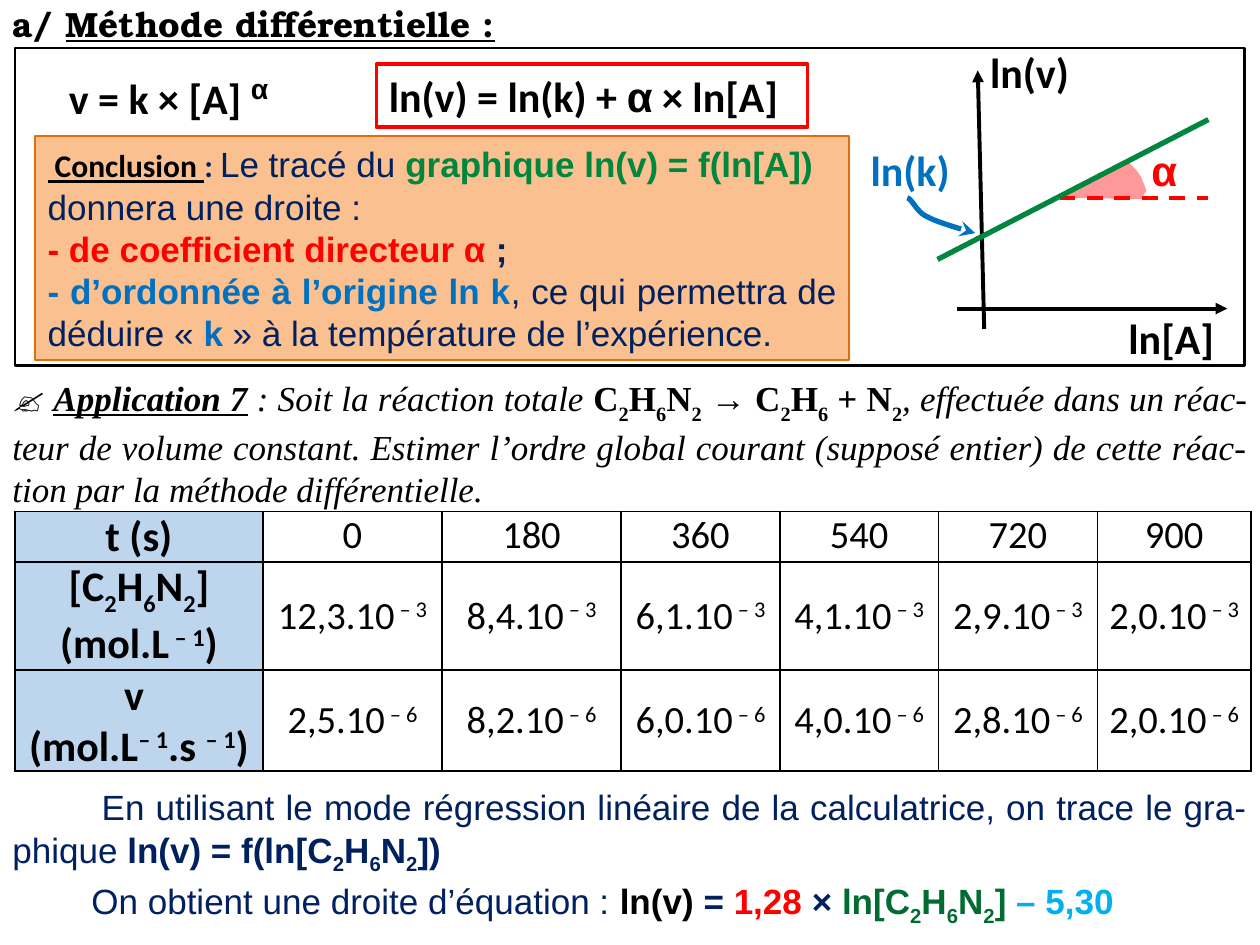
"""Build the slide on the differential method for reaction orders."""
from lxml import etree
from pptx import Presentation
from pptx.dml.color import RGBColor
from pptx.enum.dml import MSO_LINE
from pptx.enum.shapes import MSO_CONNECTOR, MSO_SHAPE
from pptx.enum.text import MSO_ANCHOR, PP_ALIGN
from pptx.oxml.ns import qn
from pptx.util import Cm, Pt

LEFT, CENTER, JUSTIFY = PP_ALIGN.LEFT, PP_ALIGN.CENTER, PP_ALIGN.JUSTIFY
TOP, MIDDLE = MSO_ANCHOR.TOP, MSO_ANCHOR.MIDDLE
STRAIGHT, RECTANGLE, DASH = MSO_CONNECTOR.STRAIGHT, MSO_SHAPE.RECTANGLE, MSO_LINE.DASH

THEME = {
    "black": "000000", "white": "FFFFFF", "navy": "002060", "red": "FF0000",
    "green": "00863D", "dark green": "006C31", "blue": "0070C0", "sky": "00B0F0",
    "peach": "FAC090", "orange": "E46C0A", "pale blue": "BDD6EE",
    "heading": ("TeX Gyre Bonum", 20), "formula": ("Calibri", 24),
    "greek": ("Arial", 24), "exponent": ("Arial", 28), "label": ("Calibri", 18),
    "body": ("Arial", 20), "exercise": ("Times New Roman", 20), "value": ("Calibri", 22),
}
BASELINES = {"~": "-25000", "|": "-30000", "^": "30000"}

TITLE = [("a/ ", "black", "b", "heading"), ("Méthode différentielle :", "black", "bu", "heading")]
RATE_LAW = [("v = k × [A] ", "black", "b", "formula"), ("^α^", "black", "b", "exponent")]
LOG_LAW = [
    ("ln(v) = ln(k) + ", "black", "b", "formula"),
    ("α", "black", "b", "greek"),
    (" × ln[A]", "black", "b", "formula"),
]
CONCLUSION = [
    [
        (" Conclusion ", "black", "bu", "label"),
        (": ", "navy", "b", "label"),
        ("Le tracé du ", "navy", "", "body"),
        ("graphique ln(v) = f(ln[A]) ", "green", "b", "body"),
        ("donnera une droite :", "navy", "", "body"),
    ],
    [("- de coefficient directeur α ", "red", "b", "body"), ("; ", "navy", "b", "body")],
    [
        ("- d’ordonnée à l’origine ln k", "blue", "b", "body"),
        (", ce qui permettra de déduire « ", "navy", "", "body"),
        ("k", "blue", "b", "body"),
        (" » à la température de l’expérience. ", "navy", "", "body"),
    ],
]
EXERCISE = [
    ("✍ ", "black", "b", "exercise"),
    ("Application 7", "black", "biu", "exercise"),
    (" : Soit la réaction totale ", "black", "i", "exercise"),
    ("C|2|H|6|N|2| → C|2|H|6| + N|2|", "black", "b", "exercise"),
    (", effectuée dans un réac-teur de volume constant. Estimer l’ordre global courant "
     "(supposé entier) de cette réac-tion par la méthode différentielle.", "black", "i", "exercise"),
]
REGRESSION = [
    ("En utilisant le mode régression linéaire de la calculatrice, on trace le gra-phique ",
     "navy", "", "body"),
    ("ln(v) = f(ln[C~2~H~6~N~2~])", "navy", "b", "body"),
]
RESULT = [
    (" On obtient une droite d’équation : ", "navy", "", "body"),
    ("ln(v) ", "black", "b", "body"),
    ("=", "navy", "b", "body"),
    (" 1,28 ", "red", "b", "body"),
    ("× ", "navy", "b", "body"),
    ("ln[C~2~H~6~N~2~] ", "dark green", "b", "body"),
    ("– 5,30", "sky", "b", "body"),
]
MEASURES = [
    (["t (s)"], ["0", "180", "360", "540", "720", "900"], ""),
    (["[C~2~H~6~N~2~] (mol.L^ – 1^)"], ["12,3", "8,4", "6,1", "4,1", "2,9", "2,0"], ".10^ – 3^"),
    (["v ", "(mol.L^– 1^.s ^– 1^)"], ["2,5", "8,2", "6,0", "4,0", "2,8", "2,0"], ".10^ – 6^"),
]
COLUMN_WIDTHS = [5, 3.61, 3.61, 3.2, 3.2, 3.2, 3.1]
ROW_HEIGHTS = [1.02, 2.18, 2.03]

GRAPH_LABELS = [
    ((22.5, 6.17, 2.36, 0.81), ("ln[A]", "black", "b", "formula")),
    ((19.71, 0.81, 2.21, 0.84), ("ln(v)", "black", "b", "formula")),
    ((22.96, 2.79, 1.04, 1.27), ("α", "red", "b", "greek")),
    ((17.3, 2.79, 2.13, 1.27), ("ln(k)", "blue", "b", "formula")),
]
X_AXIS, Y_AXIS = (19.3, 6.22, 24.74, 6.22), (19.84, 6.63, 19.71, 1.42)
LEVEL, TREND = (21.36, 3.99, 24.36, 3.99), (24.36, 2.41, 18.9, 5.23)
WEDGE = [(22.71, 3.23), (21.34, 3.99), (23.01, 4.01), (23.11, 3.84), (23.01, 3.58), (22.91, 3.43)]
POINTER = [
    [(18.29, 3.99), (18.39, 4.01), (18.47, 4.27), (18.69, 4.37)],
    [(18.69, 4.37), (18.92, 4.5), (19.66, 4.7), (19.66, 4.7)],
]


def color(name):
    return RGBColor.from_string(THEME[name])


def write_spans(para, spans, align=LEFT):
    para.alignment = align
    for text, ink, flags, style in spans:
        face, size = THEME[style]
        pieces, baseline = [["", None]], None
        for letter in text:
            if letter in BASELINES:
                baseline = None if baseline else BASELINES[letter]
                pieces.append(["", baseline])
            else:
                pieces[-1][0] += letter
        for piece, shift in pieces:
            if not piece:
                continue
            span = para.add_run()
            span.text = piece
            font = span.font
            font.name, font.size, font.color.rgb = face, Pt(size), color(ink)
            font.bold, font.italic, font.underline = "b" in flags, "i" in flags, "u" in flags
            if shift:
                font._element.set("baseline", shift)


def write_paragraphs(frame, paragraphs, aligns, anchor=TOP, wrap=True):
    frame.word_wrap, frame.vertical_anchor = wrap, anchor
    for index, (spans, align) in enumerate(zip(paragraphs, aligns)):
        write_spans(frame.add_paragraph() if index else frame.paragraphs[0], spans, align)


def add_text(page, place, spans, align=LEFT, anchor=TOP, wrap=True):
    box = page.shapes.add_textbox(*map(Cm, place))
    write_paragraphs(box.text_frame, [spans], [align], anchor, wrap)
    return box


def add_box(page, place, ink, width, fill=None):
    box = page.shapes.add_shape(RECTANGLE, *map(Cm, place))
    box.shadow.inherit = False
    if fill:
        box.fill.solid()
        box.fill.fore_color.rgb = color(fill)
    else:
        box.fill.background()
    box.line.color.rgb, box.line.width = color(ink), Pt(width)
    return box


def add_arrowhead(line, kind):
    etree.SubElement(line._get_or_add_ln(), qn("a:tailEnd"), type=kind)


def add_line(page, ends, ink, width):
    line = page.shapes.add_connector(STRAIGHT, *map(Cm, ends))
    line.line.color.rgb, line.line.width = color(ink), Pt(width)
    etree.SubElement(line._element.spPr, qn("a:effectLst"))
    return line.line


def add_outline(page, points, close):
    start, *others = [(Cm(x), Cm(y)) for x, y in points]
    builder = page.shapes.build_freeform(*start)
    builder.add_line_segments(others, close=close)
    outline = builder.convert_to_shape()
    outline.shadow.inherit = False
    return outline


def bezier(controls, steps=12):
    weights = [((1 - t) ** 3, 3 * t * (1 - t) ** 2, 3 * t * t * (1 - t), t ** 3)
               for t in (step / steps for step in range(steps + 1))]
    return [tuple(sum(w * point[axis] for w, point in zip(row, controls)) for axis in (0, 1))
            for row in weights]


def draw_graph(page):
    for axis in (X_AXIS, Y_AXIS):
        add_arrowhead(add_line(page, axis, "black", 2.25), "triangle")
    add_line(page, LEVEL, "red", 2.25).dash_style = DASH
    wedge = add_outline(page, WEDGE, True)
    wedge.fill.solid()
    wedge.fill.fore_color.rgb = color("red")
    wedge.line.fill.background()
    tint = wedge._element.spPr.find(qn("a:solidFill"))[0]
    etree.SubElement(tint, qn("a:alpha"), val="40000")
    add_line(page, TREND, "green", 3)
    for place, span in GRAPH_LABELS:
        add_text(page, place, [span], wrap=False)
    first, second = map(bezier, POINTER)
    pointer = add_outline(page, first + second[1:], False)
    pointer.fill.background()
    pointer.line.color.rgb, pointer.line.width = color("blue"), Pt(3)
    add_arrowhead(pointer.line, "stealth")


def fill_cell(cell, lines, style, flags, fill, anchor):
    cell.margin_left = cell.margin_right = Cm(0.18)
    cell.margin_top = cell.margin_bottom = 0
    cell.fill.solid()
    cell.fill.fore_color.rgb = color(fill)
    paragraphs = [[(line, "black", flags, style)] for line in lines]
    write_paragraphs(cell.text_frame, paragraphs, [CENTER] * len(lines))
    cell.vertical_anchor = anchor
    for index, side in enumerate(("lnL", "lnR", "lnT", "lnB")):
        border = etree.Element(qn("a:" + side), w=str(Pt(1)))
        paint = etree.SubElement(border, qn("a:solidFill"))
        etree.SubElement(paint, qn("a:srgbClr"), val=THEME["black"])
        cell._tc.get_or_add_tcPr().insert(index, border)


def add_measures(page):
    place = (0.3, 10.31, sum(COLUMN_WIDTHS), sum(ROW_HEIGHTS))
    table = page.shapes.add_table(len(ROW_HEIGHTS), len(COLUMN_WIDTHS), *map(Cm, place)).table
    table.first_row = table.horz_banding = False
    for column, width in zip(table.columns, COLUMN_WIDTHS):
        column.width = Cm(width)
    for row, height, (header, values, power) in zip(table.rows, ROW_HEIGHTS, MEASURES):
        row.height = Cm(height)
        head, *others = row.cells
        fill_cell(head, header, "formula", "b", "pale blue", TOP)
        for cell, value in zip(others, values):
            fill_cell(cell, [value + power], "value", "", "white", MIDDLE if power else TOP)


def main():
    deck = Presentation()
    deck.slide_width, deck.slide_height = Cm(25.4), Cm(19.05)
    page = deck.slides.add_slide(deck.slide_layouts[5])
    title = page.shapes.title
    title.left, title.top, title.width, title.height = map(Cm, (0, -0.08, 10.31, 1.12))
    write_paragraphs(title.text_frame, [TITLE], [LEFT], MIDDLE, False)
    add_box(page, (0.3, 0.97, 24.79, 6.4), "black", 1.5)
    law = add_box(page, (7.59, 1.3, 8.69, 1.27), "red", 2.25)
    write_paragraphs(law.text_frame, [LOG_LAW], [LEFT], MIDDLE)
    draw_graph(page)
    conclusion = add_box(page, (0.71, 2.74, 16.41, 4.52), "orange", 1.5, "peach")
    write_paragraphs(conclusion.text_frame, CONCLUSION, [LEFT, JUSTIFY, JUSTIFY], MIDDLE)
    add_text(page, (1.09, 1.19, 4.62, 1.45), RATE_LAW, CENTER, wrap=False)
    add_text(page, (0, 7.52, 25.4, 2.82), EXERCISE, JUSTIFY, MIDDLE)
    add_measures(page)
    regression = add_text(page, (0, 15.72, 25.4, 1.96), REGRESSION, JUSTIFY)
    regression.text_frame.paragraphs[0]._p.get_or_add_pPr().set("indent", str(Cm(1.8)))
    add_text(page, (0.3, 17.6, 23.5, 1.12), RESULT, CENTER)
    deck.save("out.pptx")


if __name__ == "__main__":
    main()
